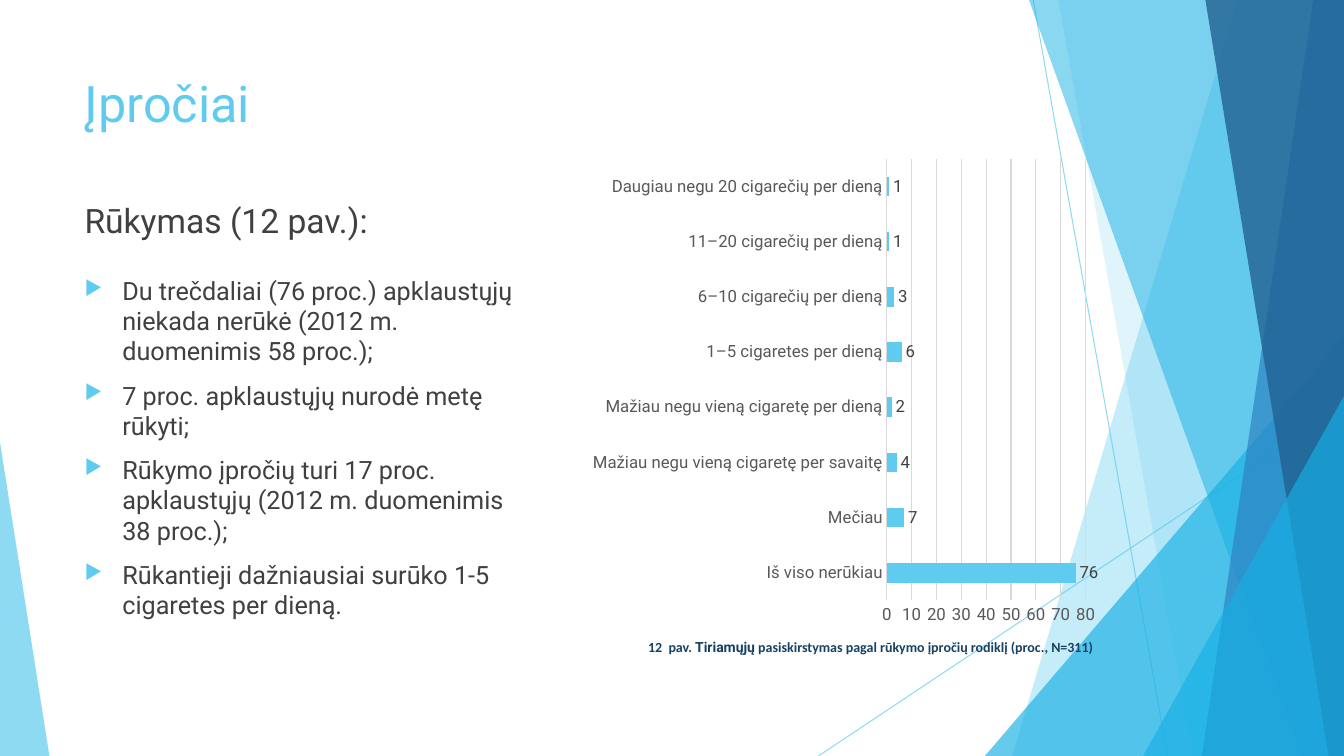
import pptx
import pptx.chart.data
import pptx.dml.color
import pptx.enum.chart
import pptx.enum.shapes
import pptx.enum.text
import pptx.oxml
import pptx.oxml.ns
import pptx.util

Pt = pptx.util.Pt
RGBColor = pptx.dml.color.RGBColor

SKY = RGBColor(0x5F, 0xCB, 0xEF)
CYAN = RGBColor(0x17, 0xB0, 0xE4)
BLUE = RGBColor(0x2E, 0x83, 0xC3)
NAVY = RGBColor(0x22, 0x62, 0x92)
CAPTION_BLUE = RGBColor(0x17, 0x41, 0x62)
TEXT_GREY = RGBColor(0x40, 0x40, 0x40)
AXIS_GREY = RGBColor(0x59, 0x59, 0x59)
GRID_GREY = RGBColor(0xD9, 0xD9, 0xD9)
FONT = "Roboto"
WIDTH, HEIGHT = 960, 540

BULLETS = [
    "Du trečdaliai (76 proc.) apklaustųjų niekada nerūkė (2012 m. duomenimis 58 proc.);",
    "7 proc. apklaustųjų nurodė metę rūkyti;",
    "Rūkymo įpročių turi 17 proc. apklaustųjų (2012 m. duomenimis 38 proc.);",
    "Rūkantieji dažniausiai surūko 1-5 cigaretes per dieną.",
]
SMOKING_HABITS = {
    "Iš viso nerūkiau": 76,
    "Mečiau": 7,
    "Mažiau negu vieną cigaretę per savaitę": 4,
    "Mažiau negu vieną cigaretę per dieną": 2,
    "1–5 cigaretes per dieną": 6,
    "6–10 cigarečių per dieną": 3,
    "11–20 cigarečių per dieną": 1,
    "Daugiau negu 20 cigarečių per dieną": 1,
}
CAPTION = [
    ("12\u00a0 pav. ".replace("\u00a0", " "), "Calibri"),
    ("Tiriamųjų", FONT),
    (" pasiskirstymas pagal rūkymo įpročių rodiklį (proc., N=311)", "Calibri"),
]


def set_font(font, size, color, name=FONT):
    font.size = Pt(size)
    font.color.rgb = color
    font.name = name


def set_opacity(color_parent, percent):
    color = color_parent.find(".//" + pptx.oxml.ns.qn("a:srgbClr"))
    color.append(pptx.oxml.parse_xml(
        f'<a:alpha {pptx.oxml.ns.nsdecls("a")} val="{percent * 1000}"/>'))


def paint(shape, color, opacity):
    shape.shadow.inherit = False
    shape.fill.solid()
    shape.fill.fore_color.rgb = color
    shape.line.fill.background()
    set_opacity(shape.fill._xPr, opacity)


def add_ray(slide, start, end):
    ray = slide.shapes.add_connector(
        pptx.enum.shapes.MSO_CONNECTOR.STRAIGHT, *map(Pt, start + end))
    ray.line.color.rgb = SKY
    ray.line.width = Pt(0.75)
    properties = ray._element.spPr
    set_opacity(properties, 70)
    properties.append(pptx.oxml.parse_xml(
        f'<a:effectLst {pptx.oxml.ns.nsdecls("a")}/>'))


def add_band(slide, top_x, bottom_x, color, opacity):
    """Slanted band that runs from its left edge to the right side of the slide."""
    builder = slide.shapes.build_freeform(Pt(top_x), 0)
    corners = [(WIDTH, 0), (WIDTH, HEIGHT), (bottom_x, HEIGHT)]
    builder.add_line_segments([(Pt(x), Pt(y)) for x, y in corners], close=True)
    paint(builder.convert_to_shape(), color, opacity)


def add_corner(slide, left, top, width, apex, color, opacity):
    """Triangle that stands on the bottom of the slide."""
    corner = slide.shapes.add_shape(
        pptx.enum.shapes.MSO_SHAPE.ISOSCELES_TRIANGLE,
        Pt(left), Pt(top), Pt(width), Pt(HEIGHT - top))
    corner.adjustments[0] = apex
    paint(corner, color, opacity)


def add_facets(slide):
    add_ray(slide, (738, 0), (834, HEIGHT))
    add_ray(slide, (WIDTH, 290), (584.6, HEIGHT))
    add_band(slide, 884, 723, SKY, 36)
    add_band(slide, 756, 852, SKY, 20)
    add_corner(slide, 703.5, 240, 256.5, 1, CYAN, 66)
    add_band(slide, 735, 929.5, CYAN, 50)
    add_band(slide, 938, 858.5, BLUE, 70)
    add_band(slide, 861, 949, NAVY, 80)
    add_corner(slide, 816.5, 283, 143.5, 1, CYAN, 66)
    add_corner(slide, 0, 316, 35.3, 0, SKY, 70)


def add_title(slide, left, top, width, height):
    title = slide.shapes.title
    title.left, title.top, title.width, title.height = map(Pt, (left, top, width, height))
    frame = title.text_frame
    frame.text = "Įpročiai"
    frame.auto_size = pptx.enum.text.MSO_AUTO_SIZE.NONE
    frame.vertical_anchor = pptx.enum.text.MSO_ANCHOR.TOP
    paragraph = frame.paragraphs[0]
    paragraph.alignment = pptx.enum.text.PP_ALIGN.LEFT
    set_font(paragraph.font, 36, SKY)


def add_text_frame(slide, left, top, width, height):
    frame = slide.shapes.add_textbox(*map(Pt, (left, top, width, height))).text_frame
    frame.word_wrap = True
    return frame


def add_bullet(paragraph):
    properties = paragraph._p.get_or_add_pPr()
    properties.set("marL", str(Pt(27)))
    properties.set("indent", str(-Pt(27)))
    namespace = pptx.oxml.ns.nsdecls("a")
    for xml in (f'<a:buClr {namespace}><a:srgbClr val="{SKY}"/></a:buClr>',
                f'<a:buSzPct {namespace} val="80000"/>',
                f'<a:buChar {namespace} char="▶"/>'):
        properties.append(pptx.oxml.parse_xml(xml))


def add_findings(slide, left, top, width, height):
    # Heading
    heading = add_text_frame(slide, left, top, width, 45.4)
    heading.vertical_anchor = pptx.enum.text.MSO_ANCHOR.BOTTOM
    heading.text = "Rūkymas (12 pav.):"
    heading.paragraphs[0].space_before = Pt(10)
    set_font(heading.paragraphs[0].font, 24, TEXT_GREY)

    # Bulleted list
    findings = add_text_frame(slide, left, top + 63.4, width, height - 63.4)
    findings.text = "\n".join(BULLETS)
    for paragraph in findings.paragraphs:
        add_bullet(paragraph)
        paragraph.space_before = Pt(10)
        set_font(paragraph.font, 18, TEXT_GREY)


def add_habits_chart(slide, left, top, width, height):
    data = pptx.chart.data.CategoryChartData(number_format="0")
    data.categories = list(SMOKING_HABITS)
    data.add_series("Series 1", list(SMOKING_HABITS.values()))
    chart = slide.shapes.add_chart(
        pptx.enum.chart.XL_CHART_TYPE.BAR_CLUSTERED,
        *map(Pt, (left, top, width, height)), data).chart
    chart.has_title = False
    chart.has_legend = False
    set_font(chart.font, 10, RGBColor(0, 0, 0))

    # Bars and their labels
    plot = chart.plots[0]
    plot.gap_width = 182
    plot.vary_by_categories = False
    bars = plot.series[0]
    bars.format.fill.solid()
    bars.format.fill.fore_color.rgb = SKY
    labels = bars.data_labels
    labels.show_value = True
    labels.number_format = "0"
    labels.number_format_is_linked = False
    labels.position = pptx.enum.chart.XL_LABEL_POSITION.OUTSIDE_END
    set_font(labels.font, 12, TEXT_GREY)

    # Axes
    categories, values = chart.category_axis, chart.value_axis
    for axis in (categories, values):
        axis.major_tick_mark = axis.minor_tick_mark = pptx.enum.chart.XL_TICK_MARK.NONE
        set_font(axis.tick_labels.font, 12, AXIS_GREY)
    values.minimum_scale, values.maximum_scale, values.major_unit = 0, 80, 10
    values.format.line.fill.background()
    for line in (categories.format.line, values.major_gridlines.format.line):
        line.color.rgb = GRID_GREY
        line.width = Pt(0.75)


def add_caption(slide, left, top, width, height):
    paragraph = add_text_frame(slide, left, top, width, height).paragraphs[0]
    paragraph.font.size = Pt(10)
    paragraph.font.bold = True
    paragraph.font.color.rgb = CAPTION_BLUE
    for text, font_name in CAPTION:
        run = paragraph.add_run()
        run.text = text
        run.font.name = font_name


def main():
    presentation = pptx.Presentation()
    presentation.slide_width, presentation.slide_height = Pt(WIDTH), Pt(HEIGHT)
    slide = presentation.slides.add_slide(presentation.slide_layouts.get_by_name("Title Only"))
    add_facets(slide)
    add_title(slide, 53.3, 48, 677, 104)
    add_findings(slide, 53.3, 129.6, 329.8, 323.3)
    add_caption(slide, 455.8, 452.9, 480, 19.4)
    add_habits_chart(slide, 416, 106.5, 373.7, 346.4)
    presentation.save("out.pptx")


if __name__ == "__main__":
    main()
